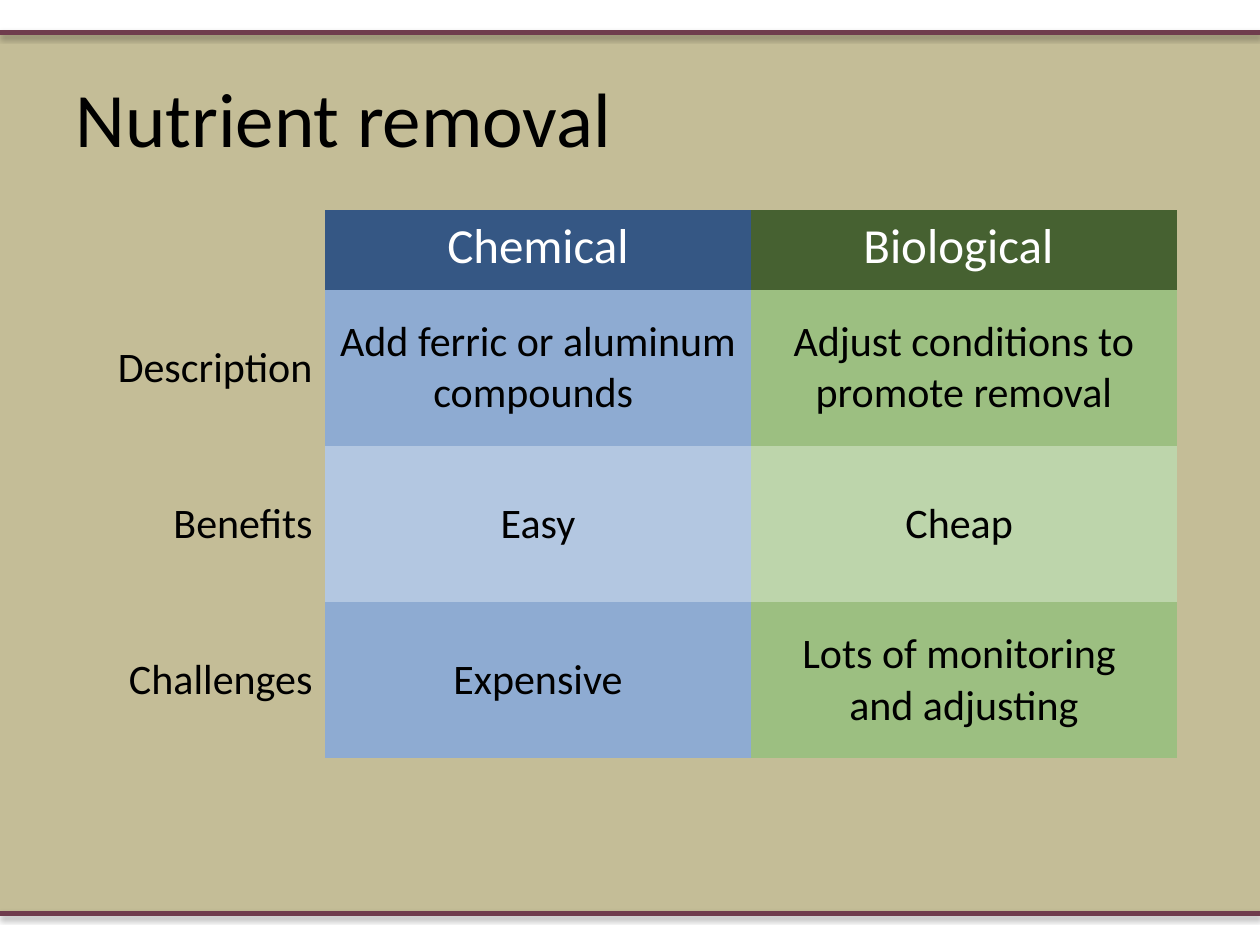
from lxml.etree import SubElement
from pptx import Presentation
from pptx.dml.color import RGBColor
from pptx.enum.shapes import MSO_CONNECTOR, MSO_SHAPE
from pptx.enum.text import MSO_ANCHOR, PP_ALIGN
from pptx.oxml.ns import qn
from pptx.util import Inches, Pt

FONT = "Calibri"
BLACK = RGBColor(0x00, 0x00, 0x00)
WHITE = RGBColor(0xFF, 0xFF, 0xFF)
TAN = RGBColor(0xC4, 0xBD, 0x97)
MAROON = RGBColor(0x6F, 0x3C, 0x4D)
CHEMICAL_HEAD = RGBColor(0x35, 0x57, 0x84)
CHEMICAL_DARK = RGBColor(0x8E, 0xAB, 0xD2)
CHEMICAL_LIGHT = RGBColor(0xB3, 0xC7, 0xE1)
BIOLOGICAL_HEAD = RGBColor(0x46, 0x61, 0x31)
BIOLOGICAL_DARK = RGBColor(0x9C, 0xBF, 0x81)
BIOLOGICAL_LIGHT = RGBColor(0xBD, 0xD5, 0xAB)

PLAIN_TABLE_STYLE = "{2D5ABB26-0587-4C30-8999-92F81FD0307C}"
COLUMN_WIDTHS = [1.83, 3.38, 3.38]
ROW_HEIGHTS = [0.63, 1.24, 1.24, 1.24]
ROWS = [
    ["", "Chemical", "Biological "],
    ["Description", "Add ferric or aluminum compounds ",
     "Adjust conditions to promote removal"],
    ["Benefits", "Easy", "Cheap "],
    ["Challenges", "Expensive", "Lots of monitoring \vand adjusting"],
]
FILLS = [
    [None, CHEMICAL_HEAD, BIOLOGICAL_HEAD],
    [None, CHEMICAL_DARK, BIOLOGICAL_DARK],
    [None, CHEMICAL_LIGHT, BIOLOGICAL_LIGHT],
    [None, CHEMICAL_DARK, BIOLOGICAL_DARK],
]


def format_text(paragraph, size, color, alignment):
    paragraph.alignment = alignment
    for run in paragraph.runs:
        run.font.name = FONT
        run.font.size = Pt(size)
        run.font.color.rgb = color


def add_background(slide, width):
    band = slide.shapes.add_shape(
        MSO_SHAPE.RECTANGLE, 0, Inches(0.25), width, Inches(7))
    band.shadow.inherit = False
    band.fill.solid()
    band.fill.fore_color.rgb = TAN
    band.line.fill.background()


def add_rule(slide, top, width):
    rule = slide.shapes.add_connector(
        MSO_CONNECTOR.STRAIGHT, 0, Inches(top), width, Inches(top))
    rule.line.color.rgb = MAROON
    rule.line.width = Pt(3)
    effects = SubElement(rule._element.spPr, qn("a:effectLst"))
    shadow = SubElement(
        effects, qn("a:outerShdw"), blurRad=str(Pt(3.1)), dist=str(Pt(1.8)),
        dir=str(90 * 60000), rotWithShape="0")
    color = SubElement(shadow, qn("a:srgbClr"), val=str(BLACK))
    SubElement(color, qn("a:alpha"), val="35000")


def set_title(slide, text):
    title = slide.shapes.title
    title.left, title.top = Inches(0.5), Inches(0.3)
    title.width, title.height = Inches(9), Inches(1.25)
    title.text_frame.text = text
    title.text_frame.vertical_anchor = MSO_ANCHOR.MIDDLE
    format_text(title.text_frame.paragraphs[0], 44, BLACK, PP_ALIGN.LEFT)
    slide.shapes.element.append(title.element)


def fill_cell(cell, text, fill, is_header):
    if fill is None:
        cell.fill.background()
    else:
        cell.fill.solid()
        cell.fill.fore_color.rgb = fill
    if not text:
        return
    cell.vertical_anchor = MSO_ANCHOR.TOP if is_header else MSO_ANCHOR.MIDDLE
    paragraph = cell.text_frame.paragraphs[0]
    paragraph.text = text
    size, color = (28, WHITE) if is_header else (24, BLACK)
    alignment = PP_ALIGN.RIGHT if fill is None else PP_ALIGN.CENTER
    format_text(paragraph, size, color, alignment)


def add_comparison_table(slide):
    frame = slide.shapes.add_table(
        len(ROWS), len(COLUMN_WIDTHS), Inches(0.75), Inches(1.67),
        Inches(sum(COLUMN_WIDTHS)), Inches(sum(ROW_HEIGHTS)))
    table = frame.table
    table.first_row = table.horz_banding = False
    table._tbl.tblPr.find(qn("a:tableStyleId")).text = PLAIN_TABLE_STYLE
    for column, width in zip(table.columns, COLUMN_WIDTHS):
        column.width = Inches(width)
    for index, (row, height) in enumerate(zip(table.rows, ROW_HEIGHTS)):
        row.height = Inches(height)
        for cell, text, fill in zip(row.cells, ROWS[index], FILLS[index]):
            fill_cell(cell, text, fill, index == 0)


def main():
    presentation = Presentation()
    presentation.slide_width = Inches(10)
    presentation.slide_height = Inches(7.5)
    slide = presentation.slides.add_slide(presentation.slide_layouts[5])
    add_background(slide, presentation.slide_width)
    for top in (0.26, 7.25):
        add_rule(slide, top, presentation.slide_width)
    set_title(slide, "Nutrient removal")
    add_comparison_table(slide)
    presentation.save("out.pptx")


if __name__ == "__main__":
    main()
